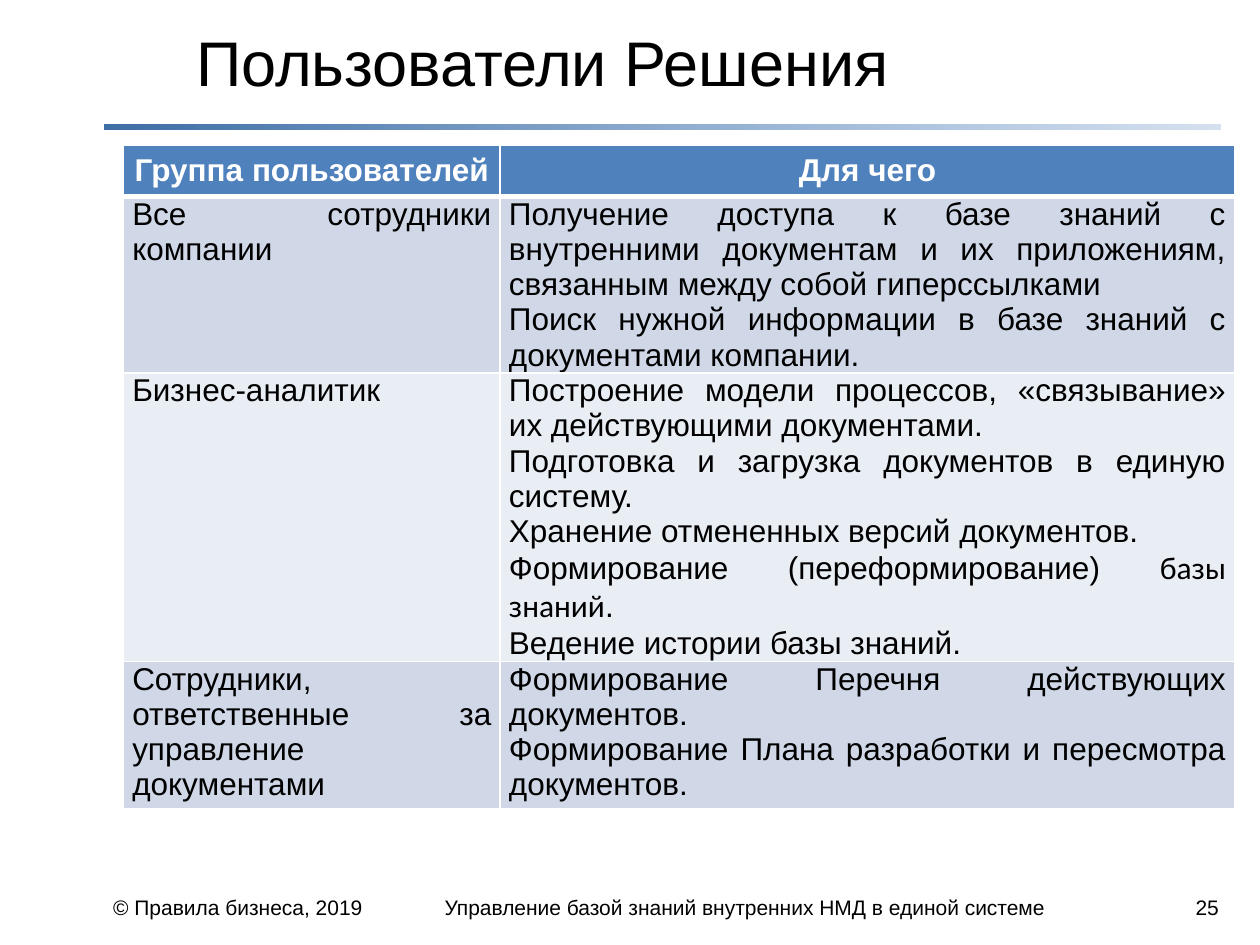
from pptx import Presentation, util as u
from pptx.dml.color import RGBColor
from pptx.enum import shapes, text
from pptx.oxml import ns
from lxml import etree

HUES = {"ink": "000000", "white": "FFFFFF", "head": "4F81BD", "deep": "3E6FA6",
        "odd": "D0D8E8", "even": "E9EDF4"}
TITLE = "Пользователи Решения"
HEADS = ["Группа пользователей", "Для чего"]
GROUPS = [
    ("Все сотрудники компании", [
        "Получение доступа к базе знаний с внутренними документам и их "
        "приложениям, связанным между собой гиперссылками",
        "Поиск нужной информации в базе знаний с документами компании."]),
    ("Бизнес-аналитик", [
        "Построение модели процессов, «связывание» их действующими документами.",
        "Подготовка и загрузка документов в единую систему.",
        "Хранение отмененных версий документов.",
        ("Формирование (переформирование) ", "базы знаний", "."),
        "Ведение истории базы знаний."]),
    ("Сотрудники, ответственные за управление документами", [
        "Формирование Перечня действующих документов.",
        "Формирование Плана разработки и пересмотра документов."]),
]
WIDTHS = [2.99, 5.83]
HEIGHTS = [0.41, 1.4, 2.28, 1.17]
FOOTER = [  # left, width, words
    (0.8, 2.44, "© Правила бизнеса, 2019"),
    (3.43, 5.59, "Управление базой знаний внутренних НМД в единой системе"),
    (9.39, 0.51, "25"),
]


def rgb(hue):
    return RGBColor.from_string(HUES[hue])


def style(run, size, hue="ink", bold=False, face="Arial"):
    font = run.font
    font.name, font.size, font.bold = face, u.Pt(size), bold
    font.color.rgb = rgb(hue)


def edge(cell, widths):
    """Draw white cell borders; widths maps a side (L, R, T, B) to points."""
    props = cell._tc.get_or_add_tcPr()
    for spot, (side, width) in enumerate(widths.items()):
        line = etree.Element(ns.qn("a:ln" + side), w=str(u.Pt(width)))
        fill = etree.SubElement(line, ns.qn("a:solidFill"))
        etree.SubElement(fill, ns.qn("a:srgbClr"), val=HUES["white"])
        props.insert(spot, line)


def write(cell, lines, fill, hue="ink", head=False):
    """Fill a cell; a tuple among lines alternates Arial and Calibri runs."""
    cell.fill.solid()
    cell.fill.fore_color.rgb = rgb(fill)
    cell.margin_left = cell.margin_right = u.Inches(0.07)
    cell.margin_top = cell.margin_bottom = 0
    cell.vertical_anchor = (text.MSO_ANCHOR.MIDDLE if head
                            else text.MSO_ANCHOR.TOP)
    frame = cell.text_frame
    for spot, line in enumerate(lines):
        para = frame.add_paragraph() if spot else frame.paragraphs[0]
        para.alignment = (text.PP_ALIGN.CENTER if head
                          else text.PP_ALIGN.JUSTIFY)
        parts = (line,) if isinstance(line, str) else line
        for turn, part in enumerate(parts):
            run = para.add_run()
            run.text = part
            style(run, 18, hue, head, "Calibri" if turn % 2 else "Arial")
    edge(cell, {"L": 1, "R": 1, "T": 1, "B": 3 if head else 1})


def place(shape, *box):
    shape.left, shape.top, shape.width, shape.height = map(u.Inches, box)


def add_bar(slide):
    bar = slide.shapes.add_shape(shapes.MSO_SHAPE.RECTANGLE,
                                 *map(u.Inches, (0.83, 0.99, 8.86, 0.04)))
    bar.shadow.inherit = False
    bar.line.fill.background()
    bar.fill.gradient()
    bar.fill.gradient_angle = 0
    for stop, hue, spot in zip(bar.fill.gradient_stops, ("deep", "head"), (0, 1)):
        stop.color.rgb = rgb(hue)
        stop.position = spot
    last = list(bar._element.spPr.iter(ns.qn("a:srgbClr")))[-1]
    etree.SubElement(last, ns.qn("a:alpha"), val="24000")


def add_users(slide):
    box = map(u.Inches, (0.98, 1.15, sum(WIDTHS), sum(HEIGHTS)))
    table = slide.shapes.add_table(len(HEIGHTS), len(WIDTHS), *box).table
    for col, width in zip(table.columns, WIDTHS):
        col.width = u.Inches(width)
    for row, height in zip(table.rows, HEIGHTS):
        row.height = u.Inches(height)
    for col, head in enumerate(HEADS):
        write(table.cell(0, col), [head], "head", "white", True)
    for row, (group, goals) in enumerate(GROUPS, 1):
        fill = "odd" if row % 2 else "even"
        write(table.cell(row, 0), [group], fill)
        write(table.cell(row, 1), goals, fill)


def main():
    deck = Presentation()
    deck.slide_width, deck.slide_height = u.Inches(10), u.Inches(7.5)
    slide = deck.slides.add_slide(deck.slide_layouts[5])
    add_bar(slide)
    add_users(slide)
    for left, width, words in FOOTER:
        box = slide.shapes.add_textbox(0, 0, 0, 0)
        place(box, left, 7.05, width, 0.4)
        box.text_frame.word_wrap = True
        box.text_frame.text = words
        style(box.text_frame.paragraphs[0].runs[0], 12)
    title = slide.shapes.title
    place(title, 0.85, 0.05, 6.91, 0.87)
    frame = title.text_frame
    frame.text = TITLE
    frame.vertical_anchor = text.MSO_ANCHOR.MIDDLE
    frame.paragraphs[0].alignment = text.PP_ALIGN.CENTER
    style(frame.paragraphs[0].runs[0], 36)
    deck.save("out.pptx")


if __name__ == "__main__":
    main()
